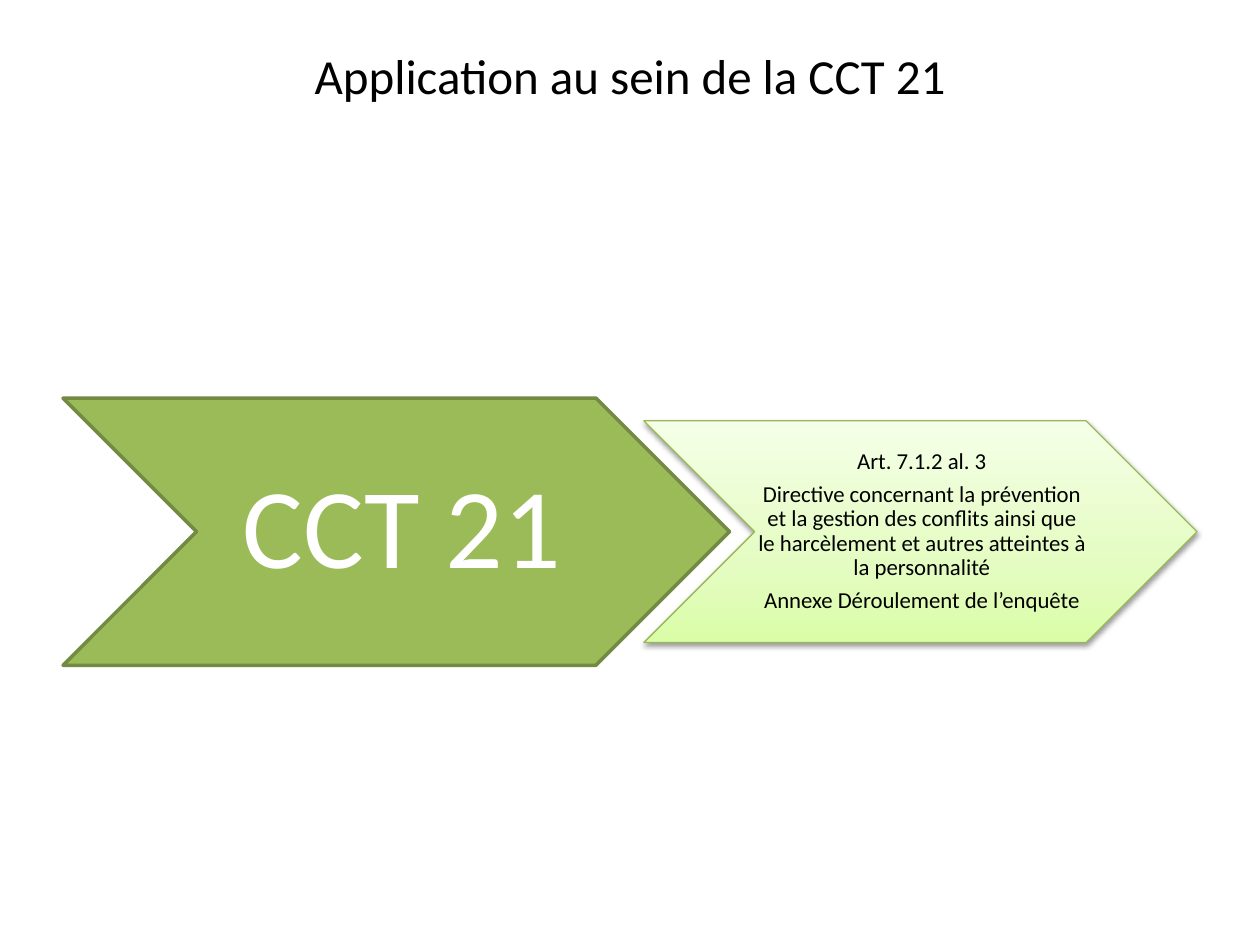
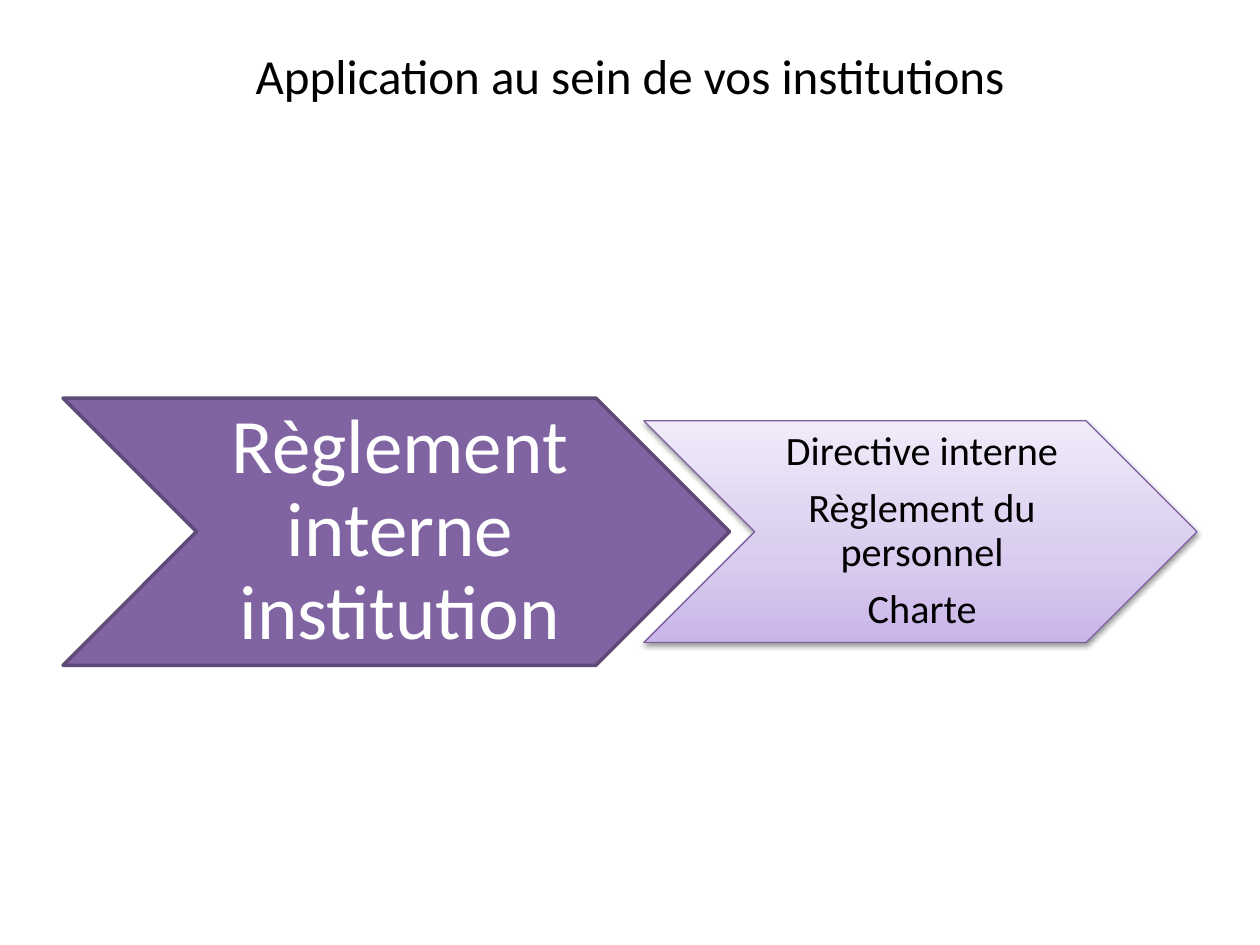
from copy import deepcopy

from lxml import etree
from pptx import Presentation
from pptx import util as u
from pptx.dml.color import RGBColor
from pptx.enum import shapes, text
from pptx.oxml import ns

FONT = "Calibri"
BLACK = RGBColor(0x00, 0x00, 0x00)
WHITE = RGBColor(0xFF, 0xFF, 0xFF)
GREEN = {
    "fill": RGBColor(0x9B, 0xBB, 0x59),
    "edge": RGBColor(0x73, 0x8A, 0x42),
    "tint_edge": RGBColor(0x98, 0xB9, 0x55),
    "tints": (RGBColor(0xDA, 0xFD, 0xA7), RGBColor(0xE4, 0xFC, 0xC2), RGBColor(0xF5, 0xFF, 0xE7)),
}
PURPLE = {
    "fill": RGBColor(0x80, 0x64, 0xA2),
    "edge": RGBColor(0x5F, 0x4A, 0x78),
    "tint_edge": RGBColor(0x7D, 0x60, 0xA0),
    "tints": (RGBColor(0xC9, 0xB5, 0xE8), RGBColor(0xD8, 0xCB, 0xEE), RGBColor(0xF0, 0xEA, 0xF9)),
}
TINT_POSITIONS = (0, 0.35, 1)

TITLE_BOX = (0.5, 0.3, 9, 0.59)
SOURCE_BOX = (0.5, 3.16, 5.29, 2.12)
DETAIL_BOX = (5.11, 3.34, 4.39, 1.76)

STEPS = [
    {
        "title": "Application au sein de la CCT 21",
        "palette": GREEN,
        "source": (["CCT 21"], 65, 0.09),
        "details": ([
            "Art. 7.1.2 al. 3",
            "Directive concernant la prévention et la gestion des conflits ainsi que "
            "le harcèlement et autres atteintes à la personnalité",
            "Annexe Déroulement de l’enquête",
        ], 13, 0.02),
    },
    {
        "title": "Application au sein de vos institutions",
        "palette": PURPLE,
        "source": (["Règlement interne institution"], 44, 0.06),
        "details": (["Directive interne", "Règlement du personnel", "Charte"], 23, 0.03),
    },
]


def apply(target, formats):
    for attribute, value in formats.items():
        setattr(target, attribute, value)


def write_lines(frame, lines, size, color, **paragraph_format):
    for index, line in enumerate(lines):
        paragraph = frame.paragraphs[0] if index == 0 else frame.add_paragraph()
        apply(paragraph, {"alignment": text.PP_ALIGN.CENTER, **paragraph_format})
        run = paragraph.add_run()
        run.text = line
        apply(run.font, {"name": FONT, "size": u.Pt(size)})
        run.font.color.rgb = color


def place_title(slide, box, wording):
    title = slide.shapes.title
    apply(title, dict(zip(("left", "top", "width", "height"), map(u.Inches, box))))
    apply(title.text_frame, {
        "vertical_anchor": text.MSO_ANCHOR.MIDDLE,
        "auto_size": text.MSO_AUTO_SIZE.NONE,
    })
    write_lines(title.text_frame, [wording], 28, BLACK)


def add_chevron(group, box, content, text_color, edge, edge_width):
    left, top, width, height = box
    lines, size, inset = content
    chevron = group.shapes.add_shape(shapes.MSO_SHAPE.CHEVRON, *map(u.Inches, box))
    chevron.shadow.inherit = False
    chevron.line.color.rgb = edge
    chevron.line.width = u.Pt(edge_width)

    inner_box = (left + height / 2, top, width - height, height)
    frame = group.shapes.add_textbox(*map(u.Inches, inner_box)).text_frame
    apply(frame, {
        "word_wrap": True,
        "vertical_anchor": text.MSO_ANCHOR.MIDDLE,
        "margin_left": u.Inches(inset),
        "margin_right": 0,
        "margin_top": u.Inches(inset / 2),
        "margin_bottom": u.Inches(inset / 2),
    })
    write_lines(frame, lines, size, text_color,
                line_spacing=0.9, space_after=u.Pt(0.35 * size))
    return chevron


def fill_gradient(shape, tints):
    shape.fill.gradient()
    shape.fill.gradient_angle = 90
    stop_list = shape._element.spPr.find(".//" + ns.qn("a:gsLst"))
    stop_list.append(deepcopy(stop_list[-1]))
    for stop, position, tint in zip(shape.fill.gradient_stops, TINT_POSITIONS, tints):
        stop.position = position
        stop.color.rgb = tint


def cast_shadow(shape):
    effects = shape._element.spPr.find(ns.qn("a:effectLst"))
    shadow = etree.SubElement(effects, ns.qn("a:outerShdw"), blurRad=str(u.Pt(3.1)),
                              dist=str(u.Pt(1.6)), dir="5400000", rotWithShape="0")
    black = etree.SubElement(shadow, ns.qn("a:srgbClr"), val=str(BLACK))
    etree.SubElement(black, ns.qn("a:alpha"), val="38000")


def add_process(slide, step):
    palette = step["palette"]
    process = slide.shapes.add_group_shape()
    source = add_chevron(process, SOURCE_BOX, step["source"], WHITE, palette["edge"], 2)
    source.fill.solid()
    source.fill.fore_color.rgb = palette["fill"]
    details = add_chevron(process, DETAIL_BOX, step["details"], BLACK, palette["tint_edge"], 0.75)
    fill_gradient(details, palette["tints"])
    cast_shadow(details)


def main():
    deck = Presentation()
    deck.slide_width, deck.slide_height = u.Inches(10), u.Inches(7.5)
    title_only = deck.slide_layouts.get_by_name("Title Only")
    for step in STEPS:
        slide = deck.slides.add_slide(title_only)
        place_title(slide, TITLE_BOX, step["title"])
        add_process(slide, step)
    deck.save("out.pptx")


if __name__ == "__main__":
    main()
